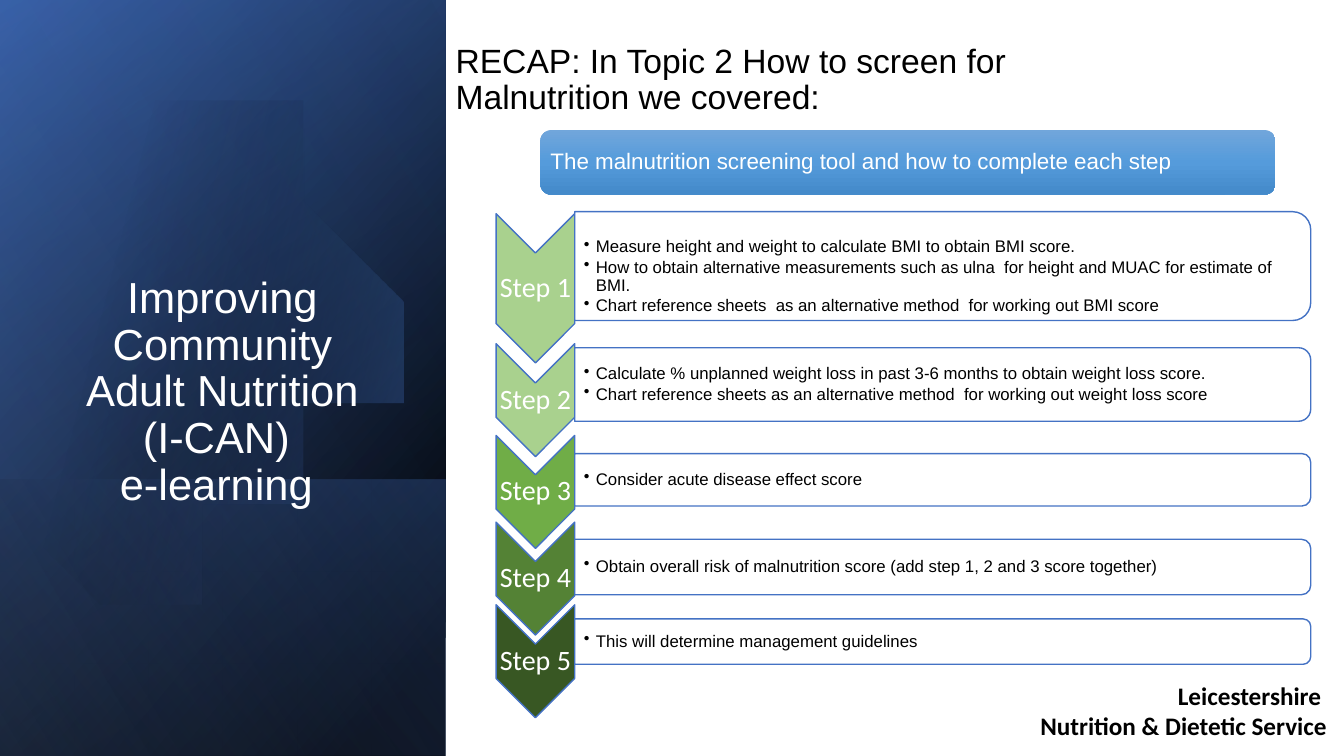
from pptx import Presentation
from pptx import util as u
from pptx.dml.color import RGBColor
from pptx.enum import shapes, text
from pptx.oxml import parse_xml
from pptx.oxml.ns import nsdecls, qn

SHAPE = shapes.MSO_SHAPE
ALIGN = text.PP_ALIGN
ANCHOR = text.MSO_ANCHOR
BLUE = "4472C4"

# chevron top, chevron length, bar top, bar height, colour, bullets
STEPS = [
    (2.12, 1.48, 2.1, 1.08, "A9D18E", [
        "Measure height and weight to calculate BMI to obtain BMI score.",
        "How to obtain alternative measurements such as ulna  for height and MUAC for estimate of BMI.",
        "Chart reference sheets  as an alternative method  for working out BMI score"]),
    (3.41, 1.12, 3.45, 0.73, "A9D18E", [
        "Calculate % unplanned weight loss in past 3-6 months to obtain weight loss score.",
        "Chart reference sheets as an alternative method  for working out weight loss score"]),
    (4.32, 1.12, 4.5, 0.52, "70AD47", ["Consider acute disease effect score"]),
    (5.18, 1.12, 5.35, 0.55, "548235", [
        "Obtain overall risk of malnutrition score (add step 1, 2 and 3 score together)"]),
    (6.0, 1.12, 6.14, 0.45, "385723", ["This will determine management guidelines"]),
]

# start point, then cubic curves as (control, control, end)
CIRCLE_START = (1.49, 1.1)
CIRCLE_CURVES = [
    ((2.46, 1.12), (3.35, 1.77), (3.63, 2.75)),
    ((3.98, 3.97), (3.28, 5.23), (2.07, 5.58)),
    ((1.31, 5.8), (0.53, 5.61), (-0.03, 5.14)),
    ((-0.03, 5.14), (-0.15, 5.03), (-0.15, 5.03)),
    ((-0.15, 5.03), (-0.15, 1.75), (-0.15, 1.75)),
    ((-0.15, 1.75), (0, 1.61), (0, 1.61)),
    ((0.23, 1.42), (0.5, 1.28), (0.8, 1.19)),
    ((1.03, 1.13), (1.26, 1.1), (1.49, 1.1)),
]


def colour(value):
    return RGBColor.from_string(value)


def fill_gradient(shape, stops, angle):
    """Stops are (position %, colour, opacity %)."""
    shape.fill.background()
    marks = "".join(
        f'<a:gs pos="{position * 1000}"><a:srgbClr val="{value}">'
        f'<a:alpha val="{opacity * 1000}"/></a:srgbClr></a:gs>'
        for position, value, opacity in stops)
    gradient = parse_xml(
        f'<a:gradFill {nsdecls("a")} rotWithShape="1"><a:gsLst>{marks}</a:gsLst>'
        f'<a:lin ang="{angle * 60000}" scaled="0"/></a:gradFill>')
    properties = shape._element.spPr
    properties.replace(properties.find(qn("a:noFill")), gradient)


def add_block(page, kind, left, top, width, height, turned=False):
    """Place a shape by the box it covers, even when turned a quarter."""
    if turned:
        left, top = left + (width - height) / 2, top + (height - width) / 2
        width, height = height, width
    shape = page.shapes.add_shape(kind, *map(u.Inches, (left, top, width, height)))
    shape.rotation = 90 if turned else 0
    shape.shadow.inherit = False
    shape.line.fill.background()
    return shape


def paint(shape, fill, line):
    shape.fill.solid()
    shape.fill.fore_color.rgb = colour(fill)
    shape.line.color.rgb = colour(line)
    shape.line.width = u.Pt(1)


def add_text(page, paragraphs, left, top, width, height, size, font="Arial",
             value="000000", bold=False, align=ALIGN.LEFT, anchor=ANCHOR.MIDDLE,
             insets=(0.1, 0.05, 0.1, 0.05), spacing=0.9, after=0, bullet=False):
    box = page.shapes.add_textbox(*map(u.Inches, (left, top, width, height)))
    frame = box.text_frame
    frame.word_wrap = True
    frame.vertical_anchor = anchor
    (frame.margin_left, frame.margin_top,
     frame.margin_right, frame.margin_bottom) = map(u.Inches, insets)
    for index, words in enumerate(paragraphs):
        para = frame.paragraphs[0] if index == 0 else frame.add_paragraph()
        para.alignment = align
        para.line_spacing = spacing
        para.space_after = u.Pt(after)
        for number, line in enumerate(words.split("\n")):
            if number:
                para.add_line_break()
            span = para.add_run()
            span.text = line
            span.font.size = u.Pt(size)
            span.font.name = font
            span.font.bold = bold
            span.font.color.rgb = colour(value)
        if bullet:
            properties = para._p.get_or_add_pPr()
            properties.set("marL", str(u.Inches(0.12)))
            properties.set("indent", str(u.Inches(-0.12)))
            properties.append(parse_xml(f'<a:buChar {nsdecls("a")} char="•"/>'))
    return box


def add_circle(page):
    points, start = [], CIRCLE_START
    for first, second, end in CIRCLE_CURVES:
        for step in range(1, 13):
            t = step / 12
            points.append(tuple(
                (1 - t) ** 3 * a + 3 * (1 - t) ** 2 * t * b + 3 * (1 - t) * t ** 2 * c + t ** 3 * d
                for a, b, c, d in zip(start, first, second, end)))
        start = end
    builder = page.shapes.build_freeform(*CIRCLE_START, scale=u.Inches(1))
    builder.add_line_segments(points, close=True)
    circle = builder.convert_to_shape()
    circle.shadow.inherit = False
    circle.line.fill.background()
    fill_gradient(circle, [(29, "000000", 0), (100, BLUE, 43)], 14)


def add_side_panel(page, left, top, width, height):
    def add_layer(stops, angle, layer_top=top):
        layer = add_block(page, SHAPE.RECTANGLE, left, layer_top, width,
                          top + height - layer_top, turned=True)
        layer._element.spPr.find(qn("a:xfrm")).set("flipH", "1")
        fill_gradient(layer, stops, angle)

    add_layer([(8, "000000", 100), (100, "2F5597", 100)], 50)
    add_layer([(0, "000000", 0), (99, BLUE, 46)], 30)
    add_layer([(2, BLUE, 29), (100, "000000", 30)], 130, top + 4.76)
    add_circle(page)
    add_layer([(0, "000000", 0), (99, "8FAADC", 11)], 120)
    add_text(page, ["Improving Community Adult Nutrition (I-CAN) \ne-learning "],
             left + 0.5, top + 2.49, 3.41, 2.62, 31, value="FFFFFF",
             align=ALIGN.CENTER, anchor=ANCHOR.BOTTOM)


def add_banner(page, left, top, width, height):
    banner = add_block(page, SHAPE.ROUNDED_RECTANGLE, left, top, width, height)
    fill_gradient(banner, [(0, "71A6DB", 100), (50, "559BDB", 100), (100, "448ACA", 100)], 90)
    add_text(page, ["The malnutrition screening tool and how to complete each step"],
             left + 0.03, top + 0.03, width - 0.06, height - 0.06, 16,
             value="FFFFFF", insets=(0.07,) * 4)


def add_steps(page, left, chevron_width, bar_width):
    bar_left = left + chevron_width
    for number, (top, length, bar_top, bar_height, shade, bullets) in enumerate(STEPS, 1):
        chevron = add_block(page, SHAPE.CHEVRON, left, top, chevron_width, length, turned=True)
        paint(chevron, shade, BLUE)
        add_text(page, [f"Step {number}"], left, top + length / 2 - 0.17, chevron_width, 0.34,
                 20, font="Calibri", value="FFFFFF", align=ALIGN.CENTER, insets=(0.01,) * 4)
        bar = add_block(page, SHAPE.ROUND_2_SAME_RECTANGLE, bar_left, bar_top,
                        bar_width, bar_height, turned=True)
        paint(bar, "FFFFFF", BLUE)
        bar.fill._xPr.find(qn("a:solidFill"))[0].append(
            parse_xml(f'<a:alpha {nsdecls("a")} val="90000"/>'))
        drop = 0.22 if len(bullets) > 2 else 0.01
        add_text(page, bullets, bar_left, bar_top + 0.04, bar_width - 0.05, bar_height - 0.08,
                 12, insets=(0.09, drop, 0.01, 0.01), after=1.8, bullet=True)


def main():
    deck = Presentation()
    deck.slide_width, deck.slide_height = u.Inches(13.33), u.Inches(7.5)
    page = deck.slides.add_slide(deck.slide_layouts[6])
    add_side_panel(page, 0, 0, 4.42, 7.5)
    add_banner(page, 5.36, 1.29, 7.29, 0.64)
    add_text(page, ["RECAP: In Topic 2 How to screen for Malnutrition we covered:"],
             4.42, 0.08, 6.29, 1.13, 24, anchor=ANCHOR.BOTTOM)
    add_steps(page, 4.92, 0.78, 7.3)
    add_text(page, ["Leicestershire ", "Nutrition & Dietetic Service"], 5.03, 6.7, 8.23, 0.71,
             18, font="Calibri", bold=True, align=ALIGN.RIGHT, anchor=ANCHOR.TOP, spacing=1.0)
    deck.save("out.pptx")


if __name__ == "__main__":
    main()
